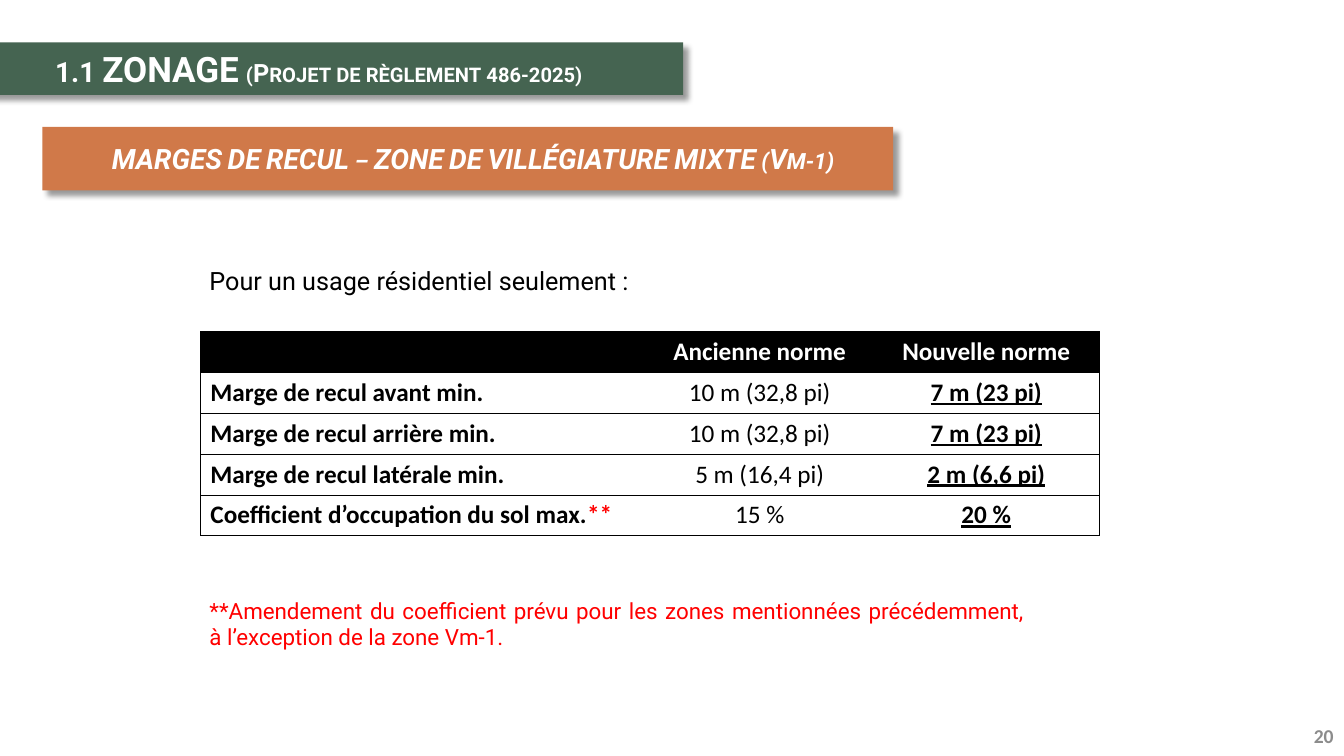
import lxml.etree
import pptx
import pptx.dml.color
import pptx.enum.shapes
import pptx.enum.text
import pptx.oxml
import pptx.oxml.ns
import pptx.util

Cm = pptx.util.Cm
ALIGN = pptx.enum.text.PP_ALIGN
MIDDLE = pptx.enum.text.MSO_ANCHOR.MIDDLE
NAMESPACE = pptx.oxml.ns.nsdecls("a")


def color(code):
    return pptx.dml.color.RGBColor.from_string(code)


def style(para, size, name, code, bold=False, align=ALIGN.LEFT):
    para.alignment = align
    para.font.size = pptx.util.Pt(size)
    para.font.name = name
    para.font.bold = bold
    para.font.color.rgb = color(code)


deck = pptx.Presentation()
deck.slide_width = Cm(33.87)
deck.slide_height = Cm(19.05)
page = deck.slides.add_slide(deck.slide_layouts[6])

texts = [
    ("20", 26.24, 18.03, 7.62, 1.02, 14, "Calibri", "8C8C8C", True, ALIGN.RIGHT),
    ("Pour un usage résidentiel seulement :",
     5.03, 6.55, 15.7, 1.02, 18, "Roboto", "000000", False, ALIGN.JUSTIFY),
    ("**Amendement du coefficient prévu pour les zones mentionnées précédemment, "
     "à l’exception de la zone Vm-1.",
     5.03, 14.91, 21.03, 1.63, 16, "Roboto", "FF0000", False, ALIGN.JUSTIFY),
]
for words, left, top, width, height, size, name, code, bold, align in texts:
    box = page.shapes.add_textbox(Cm(left), Cm(top), Cm(width), Cm(height))
    box.text_frame.word_wrap = True
    if align == ALIGN.RIGHT:
        box.text_frame.vertical_anchor = MIDDLE
    para = box.text_frame.paragraphs[0]
    para.text = words
    style(para, size, name, code, bold, align)

banners = [
    ([("MARGES DE RECUL – ZONE DE VILLÉGIATURE MIXTE (Vm-1)", 20)],
     1.07, 3.2, 21.44, 1.6, "D07949", True),
    ([("1.1 ZONAGE ", 25), ("(Projet de règlement 486-2025)", 18)],
     -0.36, 1.07, 17.58, 1.32, "456451", False),
]
for spans, left, top, width, height, fill, italic in banners:
    banner = page.shapes.add_shape(
        pptx.enum.shapes.MSO_SHAPE.RECTANGLE, Cm(left), Cm(top), Cm(width), Cm(height))
    banner.fill.solid()
    banner.fill.fore_color.rgb = color(fill)
    banner.line.fill.background()
    banner.shadow.inherit = False
    effects = banner._element.spPr.find(pptx.oxml.ns.qn("a:effectLst"))
    effects.append(pptx.oxml.parse_xml(
        f'<a:outerShdw {NAMESPACE} blurRad="50800" dist="63500" dir="2700000" '
        'algn="tl" rotWithShape="0"><a:srgbClr val="000000">'
        '<a:alpha val="40000"/></a:srgbClr></a:outerShdw>'))
    banner.text_frame.word_wrap = True
    banner.text_frame.vertical_anchor = MIDDLE
    para = banner.text_frame.paragraphs[0]
    style(para, spans[0][1], "Roboto", "FFFFFF", True)
    para.font.italic = italic
    para._p.get_or_add_pPr().set("marL", str(Cm(1.5)))
    for words, size in spans:
        span = para.add_run()
        span.text = words
        span.font.size = pptx.util.Pt(size)
        span._r.get_or_add_rPr().set("cap", "small")

rows = [
    ("", "Ancienne norme", "Nouvelle norme"),
    ("Marge de recul avant min.", "10 m (32,8 pi)", "7 m (23 pi)"),
    ("Marge de recul arrière min.", "10 m (32,8 pi)", "7 m (23 pi)"),
    ("Marge de recul latérale min.", "5 m (16,4 pi)", "2 m (6,6 pi)"),
    ("Coefficient d’occupation du sol max.", "15 %", "20 %"),
]
widths = [11.24, 5.71, 5.71]
row_height = 1.03
table = page.shapes.add_table(
    len(rows), len(widths), Cm(5.05), Cm(8.35),
    Cm(sum(widths)), Cm(row_height * len(rows))).table
table.first_row = False
table.horz_banding = False
for column, width in zip(table.columns, widths):
    column.width = Cm(width)
for row_index, row in enumerate(rows):
    table.rows[row_index].height = Cm(row_height)
    header = row_index == 0
    for column_index, words in enumerate(row):
        cell = table.cell(row_index, column_index)
        last = column_index == len(widths) - 1
        sides = {"lnL": column_index == 0, "lnR": last, "lnT": True, "lnB": True}
        for side, visible in sides.items():
            paint = ('<a:solidFill><a:srgbClr val="000000"/></a:solidFill>'
                     if visible else "<a:noFill/>")
            cell._tc.get_or_add_tcPr().append(pptx.oxml.parse_xml(
                f'<a:{side} {NAMESPACE} w="6350">{paint}</a:{side}>'))
        cell.fill.solid()
        cell.fill.fore_color.rgb = color("000000" if header else "FFFFFF")
        cell.vertical_anchor = MIDDLE
        para = cell.text_frame.paragraphs[0]
        para.text = words
        style(para, 18, "Calibri", "FFFFFF" if header else "000000",
              header or column_index != 1,
              ALIGN.CENTER if column_index else ALIGN.LEFT)
        para.font.underline = last and not header

stars = table.cell(len(rows) - 1, 0).text_frame.paragraphs[0].add_run()
stars.text = "**"
stars.font.color.rgb = color("FF0000")

deck.save("out.pptx")
